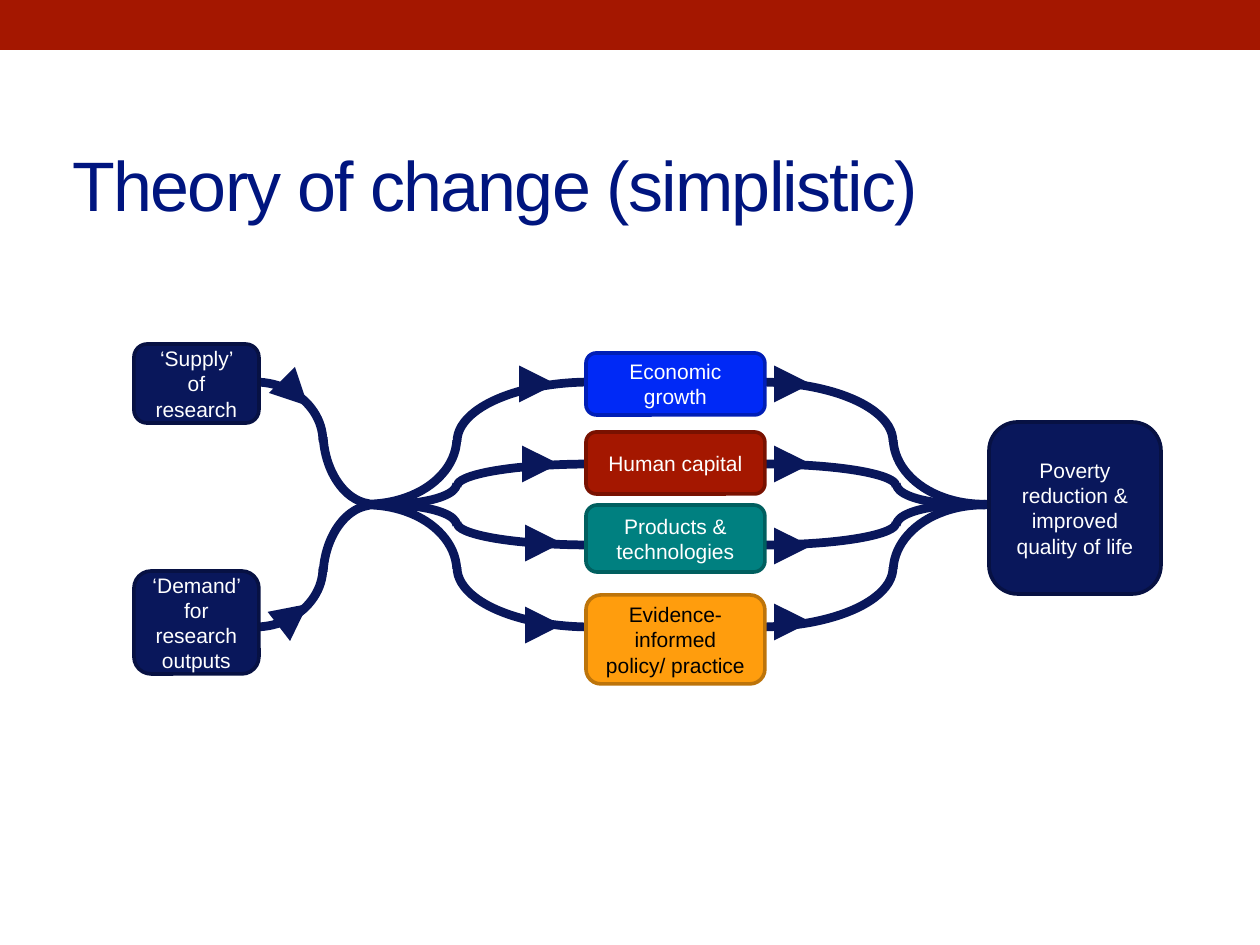
from typing import NamedTuple

from lxml.etree import SubElement
from pptx import Presentation
from pptx.dml.color import RGBColor
from pptx.enum.shapes import MSO_CONNECTOR as Connector, MSO_SHAPE as Preset
from pptx.enum.text import MSO_ANCHOR as Anchor, PP_ALIGN as Align
from pptx.oxml.ns import qn
from pptx.util import Emu, Pt

PX_PER_INCH = 126
FONT = "Arial"
NAVY, NAVY_EDGE, RED, WHITE = "09175B", "071143", "A41700", "FFFFFF"
MIRROR_SUM = 1009


class Box(NamedTuple):
    left: int
    top: int
    width: int
    height: int


class Card(NamedTuple):
    box: Box
    text: str
    fill: str
    edge: str
    text_color: str = WHITE


class Band(NamedTuple):
    lead_top: int
    lead_height: int
    tail_top: int
    tail_height: int


class Curve(NamedTuple):
    bend: int
    lead_width: int
    tail_width: int
    band: Band
    flip_h: bool = False


class Arrow(NamedTuple):
    left: int
    top: int
    dx: int = 26
    dy: int = 0


OUTER = Band(382, 119, 365, 139)
INNER = Band(464, 44, 452, 52)

CURVES = [
    Curve(323, 136, 96, OUTER),
    Curve(457, 268, 189, OUTER, True),
    Curve(457, 268, 189, INNER, True),
    Curve(893, 268, 189, OUTER),
    Curve(896, 268, 189, INNER),
]

CARDS = [
    Card(Box(134, 344, 125, 79), "‘Supply’ of research", NAVY, NAVY_EDGE),
    Card(Box(134, 571, 125, 103), "‘Demand’ for research outputs", NAVY, NAVY_EDGE),
    Card(Box(586, 353, 179, 62), "Economic growth", "0029F6", "001EB6"),
    Card(Box(586, 432, 179, 62), "Human capital", RED, "791100"),
    Card(Box(586, 505, 179, 67), "Products & technologies", "008080", "005F5F"),
    Card(Box(586, 595, 179, 89), "Evidence-informed policy/ practice",
         "FF9D0D", "BD740A", "000000"),
    Card(Box(989, 422, 172, 172), "Poverty reduction & improved quality of life",
         NAVY, NAVY_EDGE),
]

ARROWS = [
    Arrow(530, 384), Arrow(533, 464), Arrow(536, 543), Arrow(536, 625),
    *[Arrow(785, top) for top in (384, 464, 546, 622)],
    Arrow(295, 393, 13, 13), Arrow(295, 614, 13, -10),
]


def px(length: int) -> Emu:
    return Emu(round(length * 914400 / PX_PER_INCH))


def color(value: str) -> RGBColor:
    return RGBColor.from_string(value)


def add_preset(slide, preset, box: Box):
    shape = slide.shapes.add_shape(preset, *map(px, box))
    shape.shadow.inherit = False
    return shape


def set_line(line, value: str, width: float) -> None:
    line.color.rgb = color(value)
    line.width = Pt(width)


def add_run(paragraph, text: str, size: int, value: str):
    run = paragraph.add_run()
    run.text = text
    run.font.name = FONT
    run.font.size = Pt(size)
    run.font.color.rgb = color(value)
    return run


def add_arc(slide, box: Box, flip_h: bool, flip_v: bool):
    arc = add_preset(slide, Preset.ARC, box)
    arc.fill.background()
    set_line(arc.line, NAVY, 5)
    frame = arc._element.spPr.find(qn("a:xfrm"))
    for name, flipped in (("flipH", flip_h), ("flipV", flip_v)):
        if flipped:
            frame.set(name, "1")
    return arc


def add_curve(slide, curve: Curve, flip_v: bool) -> None:
    band, bend, flip_h = curve.band, curve.bend, curve.flip_h
    lead_left = bend - curve.lead_width // 2
    if flip_h:
        lead_left, tail_left = bend, bend - curve.tail_width
    else:
        lead_left, tail_left = bend - curve.lead_width, bend
    lead = Box(lead_left, band.lead_top, curve.lead_width, band.lead_height)
    tail = Box(tail_left, band.tail_top, curve.tail_width, band.tail_height)
    if flip_v:
        lead, tail = (box._replace(top=MIRROR_SUM - box.top - box.height)
                      for box in (lead, tail))
    add_arc(slide, lead, flip_h, flip_v)
    arc = add_arc(slide, tail, flip_h, flip_v)
    arc.adjustments[0] = 165.287
    arc.rotation = 176.4 if flip_h == flip_v else 183.6


def add_card(slide, card: Card) -> None:
    shape = add_preset(slide, Preset.ROUNDED_RECTANGLE, card.box)
    shape.fill.solid()
    shape.fill.fore_color.rgb = color(card.fill)
    set_line(shape.line, card.edge, 2.08)
    frame = shape.text_frame
    frame.word_wrap = True
    frame.vertical_anchor = Anchor.MIDDLE
    paragraph = frame.paragraphs[0]
    paragraph.alignment = Align.CENTER
    add_run(paragraph, card.text, 12, card.text_color)


def add_arrow(slide, arrow: Arrow) -> None:
    ends = (arrow.left, arrow.top, arrow.left + arrow.dx, arrow.top + arrow.dy)
    connector = slide.shapes.add_connector(Connector.STRAIGHT, *map(px, ends))
    set_line(connector.line, NAVY, 7)
    SubElement(connector.line._get_or_add_ln(), qn("a:tailEnd"), type="triangle")
    SubElement(connector._element.spPr, qn("a:effectLst"))


def add_title(slide, text: str) -> None:
    title = slide.shapes.title
    title.left, title.top, title.width, title.height = map(px, Box(60, 116, 1134, 136))
    title.text_frame.vertical_anchor = Anchor.MIDDLE
    paragraph = title.text_frame.paragraphs[0]
    paragraph.alignment = Align.LEFT
    run = add_run(paragraph, text, 40, "00157F")
    run.font._element.set("spc", "-100")


def main() -> None:
    presentation = Presentation()
    presentation.slide_width, presentation.slide_height = px(1260), px(945)
    slide = presentation.slides.add_slide(presentation.slide_layouts[5])
    banner = add_preset(slide, Preset.RECTANGLE, Box(0, 0, 1260, 50))
    banner.fill.solid()
    banner.fill.fore_color.rgb = color(RED)
    banner.line.fill.background()
    add_title(slide, "Theory of change (simplistic)")
    for curve in CURVES:
        for flip_v in (False, True):
            add_curve(slide, curve, flip_v)
    for card in CARDS:
        add_card(slide, card)
    for arrow in ARROWS:
        add_arrow(slide, arrow)
    presentation.save("out.pptx")


if __name__ == "__main__":
    main()
